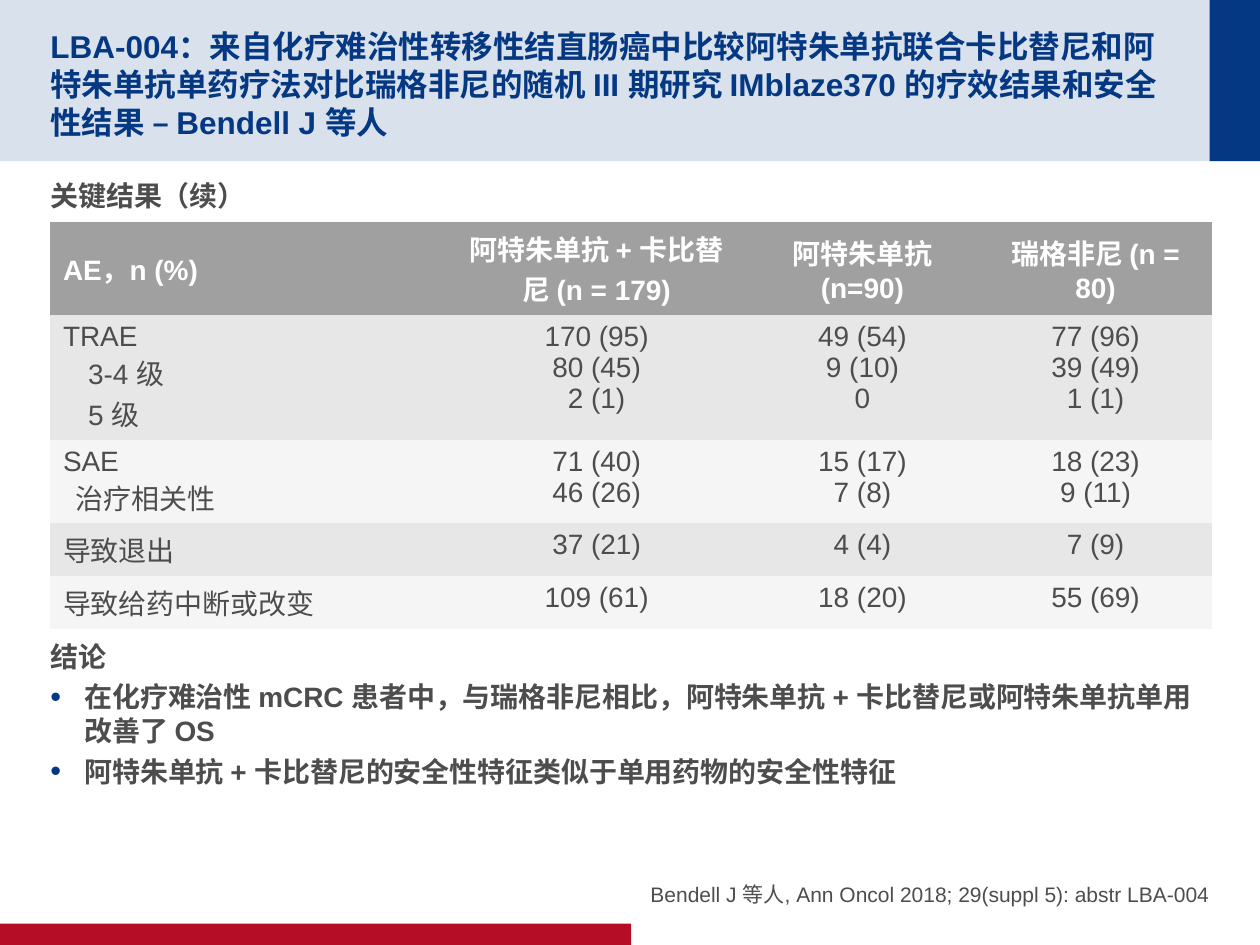
from lxml import etree
from pptx import Presentation
from pptx import util as u
from pptx.dml.color import RGBColor
from pptx.enum import shapes, text
from pptx.oxml import ns

NAVY = RGBColor(0x04, 0x38, 0x82)
PALE_BLUE = RGBColor(0xD9, 0xE1, 0xEC)
RED = RGBColor(0xB6, 0x0D, 0x27)
INK = RGBColor(0x4D, 0x4D, 0x4D)
WHITE = RGBColor(0xFF, 0xFF, 0xFF)
HEADER_GREY = RGBColor(0xA0, 0xA0, 0xA0)
BAND_GREYS = (RGBColor(0xE7, 0xE7, 0xE7), RGBColor(0xF5, 0xF5, 0xF5))
PLAIN_TABLE = "{2D5ABB26-0587-4C30-8999-92F81FD0307C}"

TITLE = (
    "LBA-004：来自化疗难治性转移性结直肠癌中比较阿特朱单抗联合卡比替尼和"
    "阿特朱单抗单药疗法对比瑞格非尼的随机 III 期研究 IMblaze370 "
    "的疗效结果和安全性结果 – Bendell J 等人"
)
CONCLUSIONS = (
    "在化疗难治性 mCRC 患者中，与瑞格非尼相比，阿特朱单抗 + 卡比替尼或阿特朱单抗单用改善了 OS",
    "阿特朱单抗 + 卡比替尼的安全性特征类似于单用药物的安全性特征",
)
CITATION = "Bendell J 等人, Ann Oncol 2018; 29(suppl 5): abstr LBA-004"
HEADER = ("AE，n (%)", "阿特朱单抗 + 卡比替尼 (n = 179)", "阿特朱单抗 (n=90)", "瑞格非尼 (n = 80)")
EVENTS = (
    (("TRAE", "3-4 级", "5 级"), ("170 (95)", "80 (45)", "2 (1)"),
     ("49 (54)", "9 (10)", "0"), ("77 (96)", "39 (49)", "1 (1)")),
    (("SAE", "治疗相关性"), ("71 (40)", "46 (26)"), ("15 (17)", "7 (8)"), ("18 (23)", "9 (11)")),
    (("导致退出",), ("37 (21)",), ("4 (4)",), ("7 (9)",)),
    (("导致给药中断或改变",), ("109 (61)",), ("18 (20)",), ("55 (69)",)),
)
SUB_INDENTS = (2, 1, 0, 0)
COLUMN_WIDTHS = (31.5, 23.7, 18.5, 18.5)
ROW_HEIGHTS = (7.4, 9.9, 6.6, 4.2, 4.2)


def set_all(target, values):
    for name, value in values.items():
        setattr(target, name, value)


class SlideBuilder:
    columns, rows = 100, 75

    def __init__(self, presentation):
        self.unit = presentation.slide_width // self.columns
        self.slide = presentation.slides.add_slide(presentation.slide_layouts[6])

    def length(self, units):
        return u.Emu(round(units * self.unit))

    def box(self, *place):
        return [self.length(units) for units in place]

    def band(self, place, color):
        shape = self.slide.shapes.add_shape(shapes.MSO_SHAPE.RECTANGLE, *self.box(*place))
        shape.shadow.inherit = False
        shape.fill.solid()
        shape.fill.fore_color.rgb = color
        shape.line.fill.background()

    def fill_text(self, frame, lines, size=16, color=INK, bold=False, align=text.PP_ALIGN.LEFT):
        for index, (words, options) in enumerate(lines):
            paragraph = frame.add_paragraph() if index else frame.paragraphs[0]
            set_all(paragraph, {"alignment": align, **options.get("spacing", {})})
            run = paragraph.add_run()
            run.text = words
            set_all(run.font, {"name": "Arial", "size": u.Pt(size), "bold": bold})
            run.font.color.rgb = color
            properties = paragraph._p.get_or_add_pPr()
            if "indent" in options:
                properties.set("marL", str(self.length(options["indent"])))
            if options.get("bullet"):
                self.bullet(properties, options["indent"])

    def bullet(self, properties, indent):
        properties.set("indent", str(-self.length(indent)))
        color = etree.SubElement(properties, ns.qn("a:buClr"))
        etree.SubElement(color, ns.qn("a:srgbClr"), val=str(NAVY))
        etree.SubElement(properties, ns.qn("a:buSzPct"), val="110000")
        etree.SubElement(properties, ns.qn("a:buFont"), typeface="Arial")
        etree.SubElement(properties, ns.qn("a:buChar"), char="•")

    def text_box(self, place, lines, anchor=text.MSO_ANCHOR.TOP, top=0.5, bottom=0, **style):
        frame = self.slide.shapes.add_textbox(*self.box(*place)).text_frame
        set_all(frame, {
            "word_wrap": True, "vertical_anchor": anchor,
            "margin_left": 0, "margin_right": 0,
            "margin_top": self.length(top), "margin_bottom": self.length(bottom),
        })
        self.fill_text(frame, lines, **style)

    def cell(self, cell, lines, fill, anchor, **style):
        cell.fill.solid()
        cell.fill.fore_color.rgb = fill
        cell.vertical_anchor = anchor
        self.fill_text(cell.text_frame, lines, **style)

    def event_table(self, left, top):
        place = self.box(left, top, sum(COLUMN_WIDTHS), sum(ROW_HEIGHTS))
        table = self.slide.shapes.add_table(
            len(ROW_HEIGHTS), len(COLUMN_WIDTHS), *place).table
        table._tbl.tblPr.find(ns.qn("a:tableStyleId")).text = PLAIN_TABLE
        for column, width in zip(table.columns, COLUMN_WIDTHS):
            column.width = self.length(width)
        for row, height in zip(table.rows, ROW_HEIGHTS):
            row.height = self.length(height)
        aligns = [text.PP_ALIGN.LEFT] + [text.PP_ALIGN.CENTER] * (len(HEADER) - 1)
        for column, (words, align) in enumerate(zip(HEADER, aligns)):
            self.cell(table.cell(0, column), [(words, {})], HEADER_GREY,
                      text.MSO_ANCHOR.MIDDLE, color=WHITE, bold=True, align=align)
        for row, (event, indent) in enumerate(zip(EVENTS, SUB_INDENTS)):
            for column, (words, align) in enumerate(zip(event, aligns)):
                lines = [(line, {"indent": indent} if index and not column else {})
                         for index, line in enumerate(words)]
                self.cell(table.cell(row + 1, column), lines, BAND_GREYS[row % 2],
                          text.MSO_ANCHOR.TOP, align=align)


def main():
    presentation = Presentation()
    set_all(presentation, {"slide_width": u.Inches(10), "slide_height": u.Inches(7.5)})
    builder = SlideBuilder(presentation)
    builder.band((0, 0, 100, 12.8), PALE_BLUE)
    builder.band((96, 0, 4, 12.8), NAVY)
    builder.band((0, 73.3, 50.1, 1.7), RED)
    builder.text_box((4, 2, 90.1, 8.8), [(TITLE, {})], text.MSO_ANCHOR.MIDDLE,
                     size=18, color=NAVY, bold=True)
    after = {"space_after": u.Pt(4)}
    findings = [
        ("关键结果（续）", {"spacing": after}),
        ("结论", {"spacing": {"space_before": u.Pt(240), **after}}),
    ]
    findings += [(line, {"spacing": after, "indent": 2.7, "bullet": True}) for line in CONCLUSIONS]
    builder.text_box((4, 13.7, 92, 51.9), findings, bottom=0.5, bold=True)
    builder.text_box((50.8, 66.7, 45.2, 5.3), [(CITATION, {"spacing": after})],
                     text.MSO_ANCHOR.BOTTOM, top=0, size=12, align=text.PP_ALIGN.RIGHT)
    builder.event_table(4, 17.6)
    presentation.save("out.pptx")


if __name__ == "__main__":
    main()
